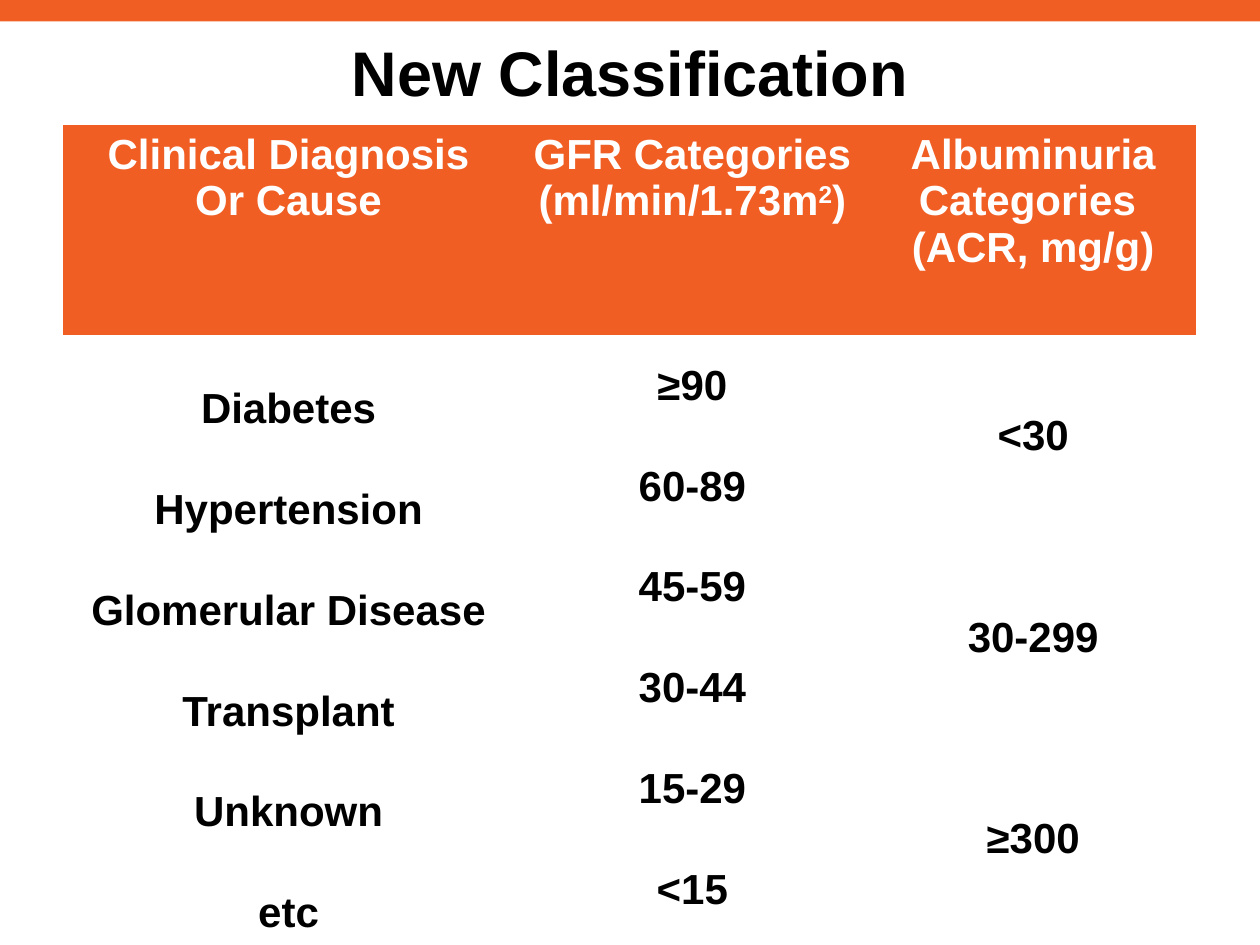
from dataclasses import dataclass

from pptx import Presentation
from pptx.dml.color import RGBColor
from pptx.enum import shapes, text
from pptx.oxml import ns
from pptx.util import Inches, Pt

ORANGE = RGBColor(0xF1, 0x5E, 0x23)
BLACK = RGBColor(0, 0, 0)
WHITE = RGBColor(0xFF, 0xFF, 0xFF)
FONT = "Arial"
PLAIN_TABLE_STYLE = "{2D5ABB26-0587-4C30-8999-92F81FD0307C}"
COLUMN_WIDTHS = (3.58, 2.83, 2.58)
HEADER_HEIGHT = 1.67
ROW_HEIGHT = 0.8


@dataclass(frozen=True)
class Run:
    text: str
    superscript: bool = False


@dataclass(frozen=True)
class Column:
    header: tuple[tuple[Run, ...], ...]  # paragraphs of runs
    values: tuple[str, ...]
    rows_per_value: int = 1
    line_spacing: float = 1.0
    margins: tuple[float, float] = (0.1, 0.05)  # side, top and bottom


COLUMNS = (
    Column(
        ((Run("Clinical Diagnosis"),), (Run("Or Cause"),)),
        ("Diabetes", "Hypertension", "Glomerular Disease",
         "Transplant", "Unknown", "etc"),
        line_spacing=2.0,
        margins=(0.07, 0),
    ),
    Column(
        ((Run("GFR Categories (ml/min/1.73m"), Run("2", superscript=True), Run(")")),),
        ("≥90", "60-89", "45-59", "30-44", "15-29", "<15"),
    ),
    Column(
        ((Run("Albuminuria Categories "),), (Run("(ACR, mg/g)"),)),
        ("<30", "30-299", "≥300"),
        rows_per_value=2,
    ),
)


def write_text(frame, paragraphs, *, size: float = 24, color: RGBColor = BLACK,
               line_spacing: float = 1.0) -> None:
    """Fill a text frame with centred bold paragraphs."""
    for index, runs in enumerate(paragraphs):
        paragraph = frame.paragraphs[0] if index == 0 else frame.add_paragraph()
        paragraph.alignment = text.PP_ALIGN.CENTER
        paragraph.line_spacing = line_spacing
        for item in runs:
            run = paragraph.add_run()
            run.text = item.text
            run.font.name = FONT
            run.font.size = Pt(size)
            run.font.bold = True
            run.font.color.rgb = color
            if item.superscript:
                run.font._element.set("baseline", "30000")


def set_margins(cell, side: float, vertical: float) -> None:
    cell.margin_left = cell.margin_right = Inches(side)
    cell.margin_top = cell.margin_bottom = Inches(vertical)


def draw_column(table, index: int, column: Column) -> None:
    header = table.cell(0, index)
    header.fill.solid()
    header.fill.fore_color.rgb = ORANGE
    set_margins(header, 0.1, 0.05)
    write_text(header.text_frame, column.header, color=WHITE)

    for position, value in enumerate(column.values):
        first_row = 1 + position * column.rows_per_value
        last_row = first_row + column.rows_per_value - 1
        cell = table.cell(first_row, index)
        if last_row > first_row:
            cell.merge(table.cell(last_row, index))
        for row in range(first_row, last_row + 1):
            table.cell(row, index).fill.background()
        cell.vertical_anchor = text.MSO_ANCHOR.MIDDLE
        set_margins(cell, *column.margins)
        write_text(cell.text_frame, ((Run(value),),),
                   line_spacing=column.line_spacing)


def main() -> None:
    presentation = Presentation()
    presentation.slide_width = Inches(10)
    presentation.slide_height = Inches(7.5)
    slide = presentation.slides.add_slide(presentation.slide_layouts[6])

    # Top band
    band = slide.shapes.add_shape(shapes.MSO_SHAPE.RECTANGLE, 0, 0,
                                  Inches(10), Inches(0.17))
    band.shadow.inherit = False
    band.fill.solid()
    band.fill.fore_color.rgb = ORANGE
    band.line.fill.background()

    # Title
    title = slide.shapes.add_textbox(Inches(0.16), Inches(0.2),
                                     Inches(9.68), Inches(0.74))
    title.text_frame.word_wrap = True
    title.text_frame.vertical_anchor = text.MSO_ANCHOR.MIDDLE
    write_text(title.text_frame, ((Run("New Classification"),),), size=36)

    # Classification table
    body_rows = len(COLUMNS[0].values)
    frame = slide.shapes.add_table(
        body_rows + 1, len(COLUMNS), Inches(0.5), Inches(0.99),
        Inches(sum(COLUMN_WIDTHS)), Inches(HEADER_HEIGHT + body_rows * ROW_HEIGHT))
    table = frame.table
    table.first_row = table.horz_banding = False
    table._tbl.tblPr.find(ns.qn("a:tableStyleId")).text = PLAIN_TABLE_STYLE
    for row_index, row in enumerate(table.rows):
        row.height = Inches(ROW_HEIGHT if row_index else HEADER_HEIGHT)
    for index, (column, width) in enumerate(zip(COLUMNS, COLUMN_WIDTHS)):
        table.columns[index].width = Inches(width)
        draw_column(table, index, column)

    presentation.save("out.pptx")


if __name__ == "__main__":
    main()
